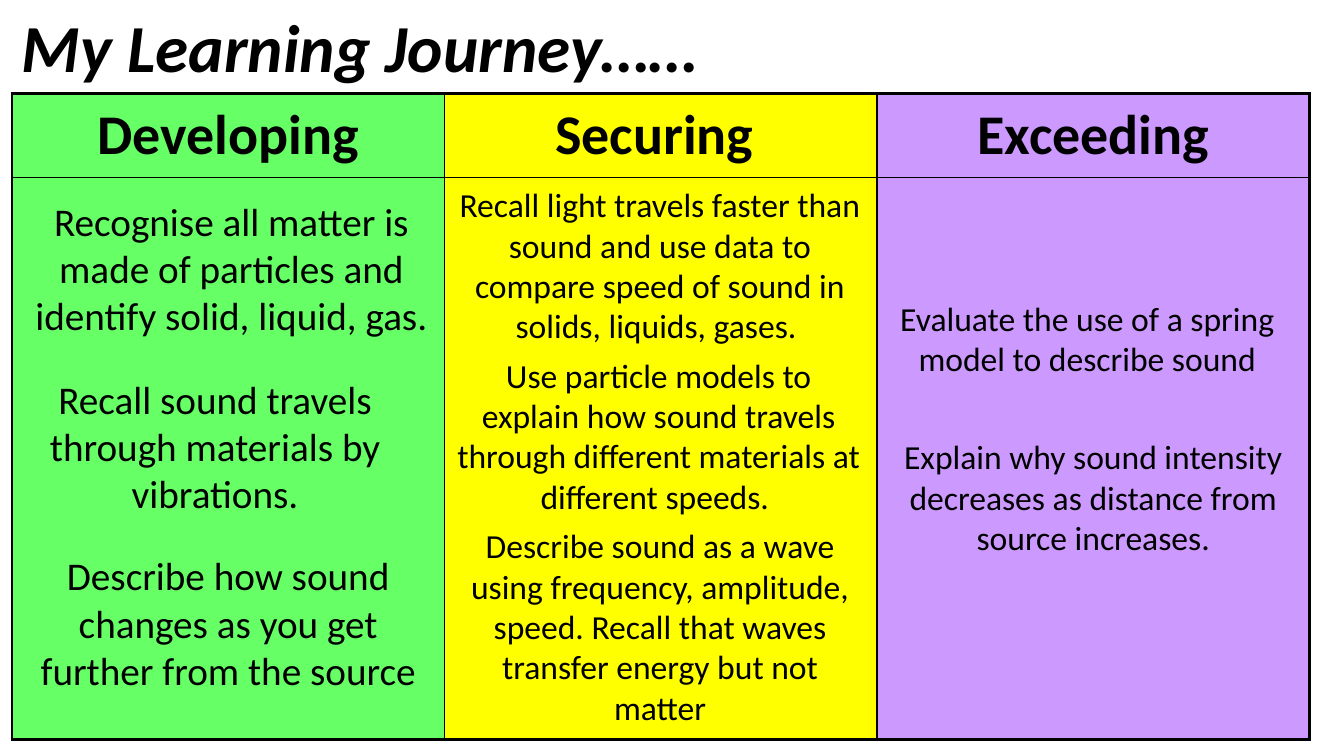
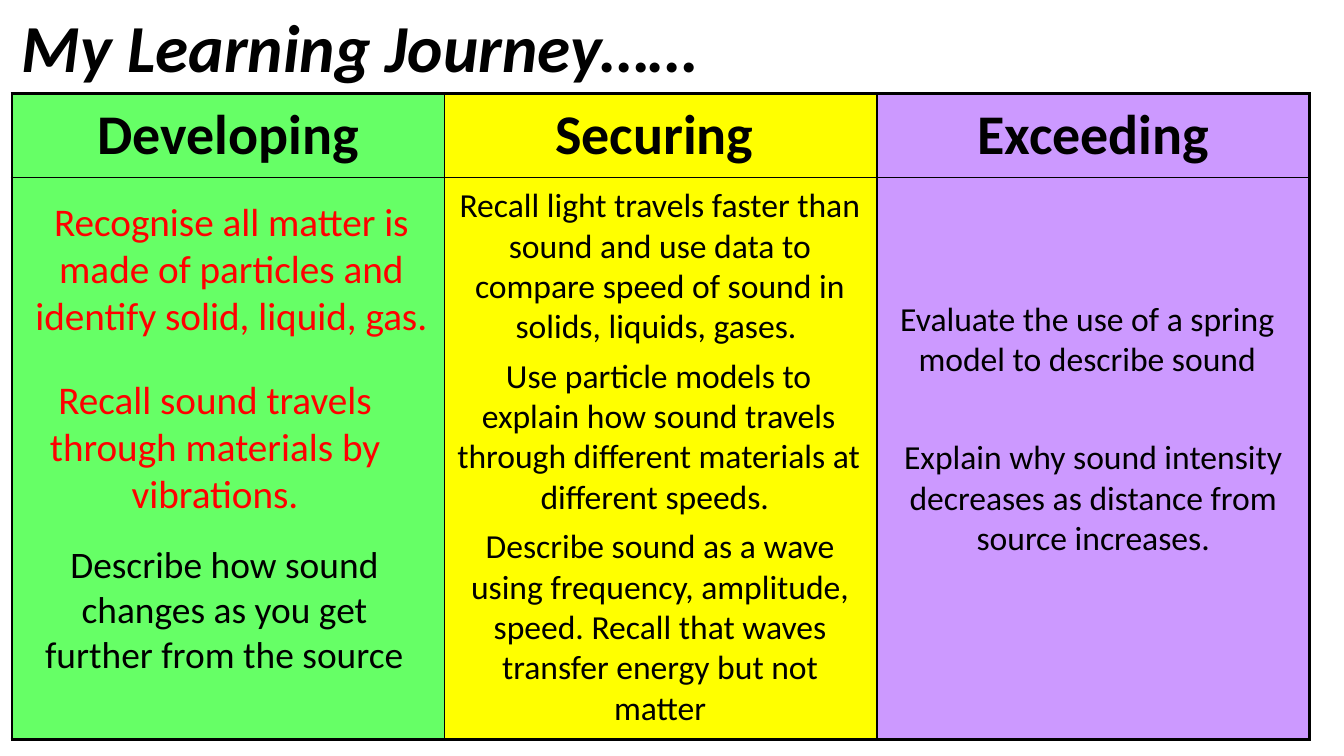
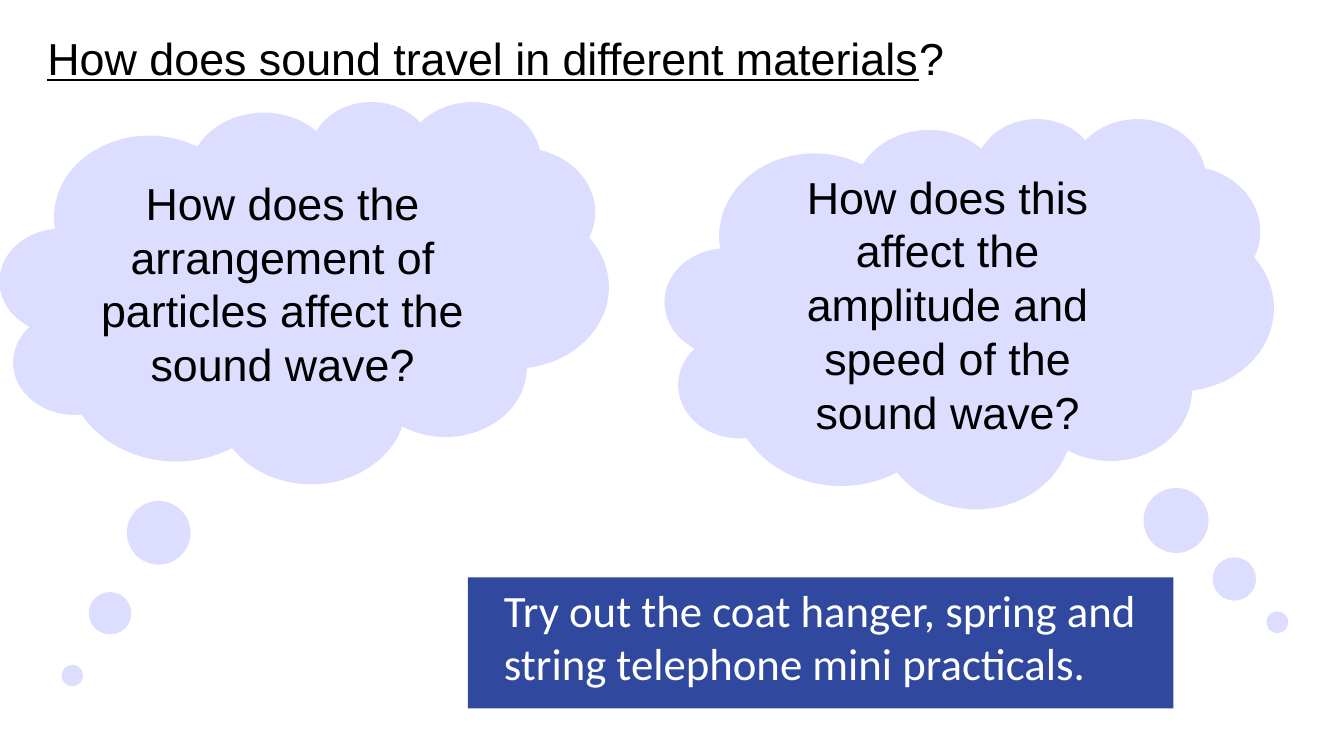
from lxml.etree import SubElement
from pptx import Presentation
from pptx.dml.color import RGBColor
from pptx.enum.shapes import MSO_SHAPE as Shape
from pptx.enum.text import MSO_ANCHOR as Anchor, MSO_AUTO_SIZE as AutoSize, PP_ALIGN as Align
from pptx.oxml.ns import qn
from pptx.util import Cm, Pt

BLACK, RED, WHITE = "000000", "FF0000", "FFFFFF"
CLOUD, NAVY = "DDDDFF", "31489F"

JOURNEY = "My Learning Journey……"
LEVELS = [("Developing", "66FF66"), ("Securing ", "FFFF00"), ("Exceeding", "CC99FF")]
TABLE_LEFT, TABLE_TOP, LEVEL_WIDTH, ROW_HEIGHTS = 0.3, 2.36, 10.9, (2.11, 14.17)
OUTER_LINE, INNER_LINE = 2.25, 1

DEVELOPING_GOALS = [
    ("Recognise all matter is made of particles and identify solid, liquid, gas.", (0.48, 4.84, 10.7, 3.9)),
    ("Recall sound travels through materials by vibrations.", (0.58, 9.33, 9.68, 3.9)),
]
SOURCE_GOAL = "Describe how sound changes as you get further from the source"
LATER_GOALS = [
    ("Recall light travels faster than sound and use data to compare speed of sound in solids, liquids, gases. ",
     (11.28, 4.52, 10.7, 4.4)),
    ("Use particle models to explain how sound travels through different materials at different speeds. ",
     (11.25, 8.81, 10.7, 4.4)),
    ("Describe sound as a wave using frequency, amplitude, speed. Recall that waves transfer energy but not matter",
     (11.25, 13.11, 10.77, 5.4)),
    ("Evaluate the use of a spring model to describe sound", (22.05, 7.37, 10.7, 2.4)),
    ("Explain why sound intensity decreases as distance from source increases.", (22.2, 10.87, 10.7, 3.4)),
]
JOURNEYS = [
    {"goal_color": BLACK, "source_place": (0.3, 13.78, 10.9, 3.9), "source_size": 28},
    {"goal_color": RED, "source_place": (0.58, 13.51, 10.16, 3.7), "source_size": 26.7},
]

QUESTION = "How does sound travel in different materials"
THOUGHTS = [
    ("How does the arrangement of particles affect the sound wave?", (0, 2.54, 15.34, 9.63), (-0.381, 1.004)),
    ("How does this affect the amplitude and speed of the sound wave?", (16.76, 2.97, 15.34, 9.83), (0.506, 0.793)),
]
TASK = "Try out the coat hanger, spring and string telephone mini practicals."
TASK_PLACE = (11.79, 14.55, 17.78, 3.3)


def rgb(color):
    return RGBColor.from_string(color)


def lengths(place):
    return [Cm(value) for value in place]


def write(frame, text, size=24, font="Calibri", color=BLACK, bold=False, italic=False,
          underline=False, align=Align.CENTER, anchor=Anchor.TOP):
    frame.word_wrap = True
    frame.vertical_anchor = anchor
    paragraph = frame.paragraphs[0]
    paragraph.alignment = align
    run = paragraph.add_run()
    run.text = text
    style = run.font
    style.size, style.name, style.color.rgb = Pt(size), font, rgb(color)
    style.bold, style.italic, style.underline = bold, italic, underline


def add_titled_slide(deck, place, text, **style):
    slide = deck.slides.add_slide(deck.slide_layouts[5])
    title = slide.shapes.title
    title.left, title.top, title.width, title.height = lengths(place)
    title.text_frame.auto_size = AutoSize.NONE
    write(title.text_frame, text, align=Align.LEFT, **style)
    return slide


def add_goal(slide, text, place, **style):
    write(slide.shapes.add_textbox(*lengths(place)).text_frame, text, **style)


def add_filled_shape(slide, kind, place, color):
    shape = slide.shapes.add_shape(kind, *lengths(place))
    shape.shadow.inherit = False
    shape.fill.solid()
    shape.fill.fore_color.rgb = rgb(color)
    shape.line.fill.background()
    return shape


def set_borders(cell, widths):
    properties = cell._tc.get_or_add_tcPr()
    for index, (side, width) in enumerate(widths.items()):
        line = SubElement(properties, qn(f"a:ln{side}"), w=str(Pt(width)))
        SubElement(SubElement(line, qn("a:solidFill")), qn("a:srgbClr"), val=BLACK)
        properties.insert(index, line)


def add_levels(slide):
    place = (TABLE_LEFT, TABLE_TOP, LEVEL_WIDTH * len(LEVELS), sum(ROW_HEIGHTS))
    levels = slide.shapes.add_table(len(ROW_HEIGHTS), len(LEVELS), *lengths(place)).table
    levels.first_row = levels.horz_banding = False
    last_row, last_column = len(ROW_HEIGHTS) - 1, len(LEVELS) - 1
    for row, height in enumerate(ROW_HEIGHTS):
        levels.rows[row].height = Cm(height)
        for column, (heading, color) in enumerate(LEVELS):
            levels.columns[column].width = Cm(LEVEL_WIDTH)
            cell = levels.cell(row, column)
            cell.fill.solid()
            cell.fill.fore_color.rgb = rgb(color)
            edges = {"L": column == 0, "R": column == last_column, "T": row == 0, "B": row == last_row}
            set_borders(cell, {side: OUTER_LINE if outer else INNER_LINE for side, outer in edges.items()})
            if row == 0:
                cell.vertical_anchor = Anchor.MIDDLE
                write(cell.text_frame, heading, size=40, bold=True, anchor=Anchor.MIDDLE)


def add_journey(deck, goal_color, source_place, source_size):
    slide = add_titled_slide(deck, (0.3, 0, 24.3, 2.3), JOURNEY, size=48, bold=True, italic=True)
    add_levels(slide)
    for text, place in DEVELOPING_GOALS:
        add_goal(slide, text, place, size=28, color=goal_color)
    add_goal(slide, SOURCE_GOAL, source_place, size=source_size)
    for text, place in LATER_GOALS:
        add_goal(slide, text, place)


def add_question(deck):
    slide = add_titled_slide(deck, (0.94, 0.64, 24.9, 1.62), QUESTION, size=32, font="Arial", underline=True)
    write(slide.shapes.title.text_frame, "?", size=32, font="Arial", align=Align.LEFT)
    for text, place, tail in THOUGHTS:
        cloud = add_filled_shape(slide, Shape.CLOUD_CALLOUT, place, CLOUD)
        cloud.adjustments[0], cloud.adjustments[1] = tail
        write(cloud.text_frame, text, size=32, font="Arial", anchor=Anchor.MIDDLE)
    task = add_filled_shape(slide, Shape.RECTANGLE, TASK_PLACE, NAVY)
    task.text_frame.margin_left = Cm(0.91)
    write(task.text_frame, TASK, size=32, color=WHITE, align=Align.LEFT)


def main():
    deck = Presentation()
    deck.slide_width, deck.slide_height = Cm(33.87), Cm(19.05)
    for journey in JOURNEYS:
        add_journey(deck, **journey)
    add_question(deck)
    deck.save("out.pptx")


if __name__ == "__main__":
    main()
